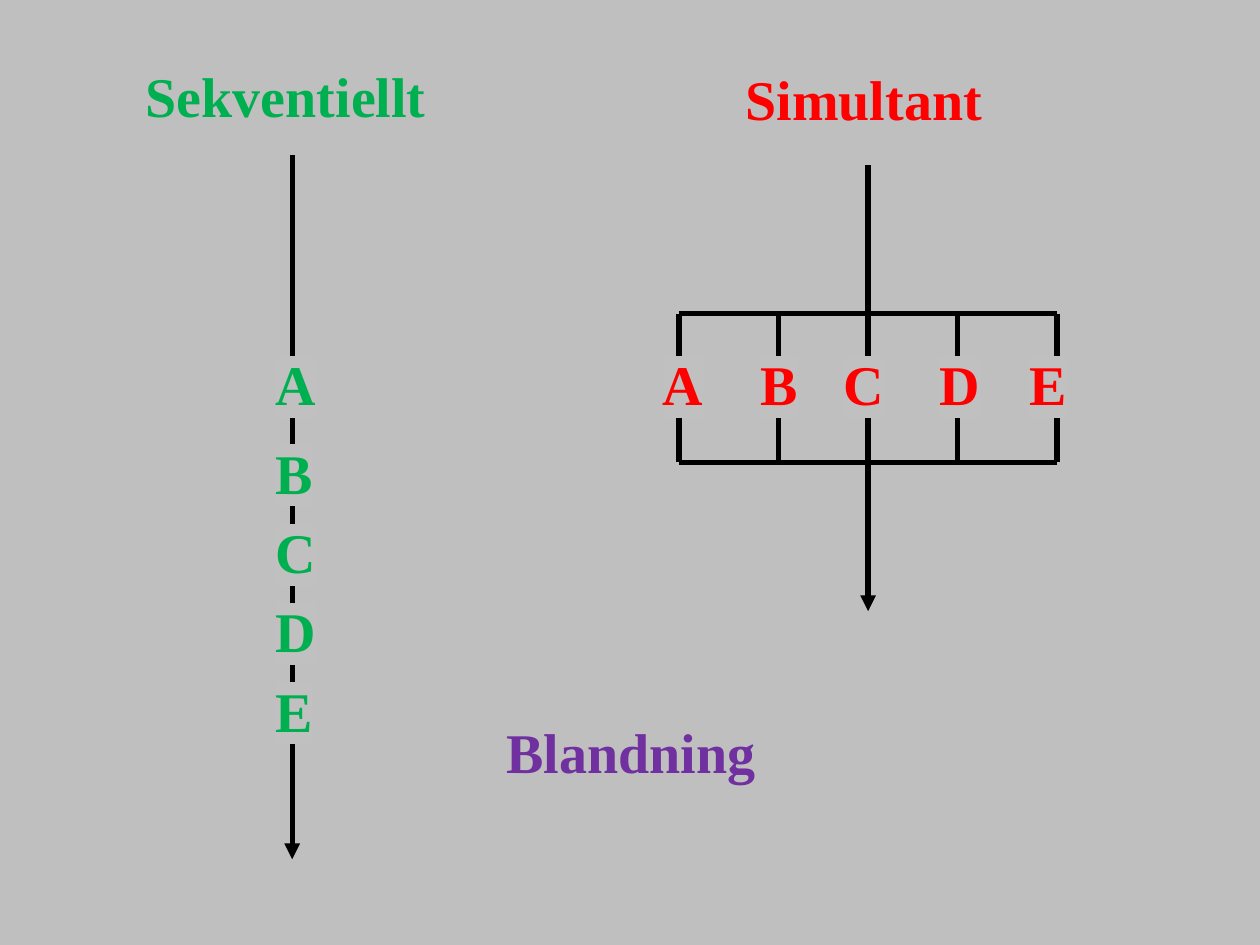
"""Build a slide comparing sequential and simultaneous processing of steps A to E."""
from lxml.etree import SubElement
from pptx import Presentation
from pptx.dml.color import RGBColor
from pptx.enum.shapes import MSO_CONNECTOR
from pptx.enum.text import MSO_AUTO_SIZE
from pptx.oxml.ns import qn
from pptx.util import Cm, Pt

GREY = RGBColor(0xBF, 0xBF, 0xBF)
BLACK = RGBColor(0, 0, 0)
GREEN = RGBColor(0x00, 0xB0, 0x50)
RED = RGBColor(0xFF, 0, 0)
PURPLE = RGBColor(0x70, 0x30, 0xA0)
HIGHLIGHT = "C0C0C0"

presentation = Presentation()
presentation.slide_width, presentation.slide_height = Cm(25.4), Cm(19.05)
slide = presentation.slides.add_slide(presentation.slide_layouts[6])
slide.background.fill.solid()
slide.background.fill.fore_color.rgb = GREY


def add_line(x1, y1, x2, y2, arrow=False):
    line = slide.shapes.add_connector(MSO_CONNECTOR.STRAIGHT, Cm(x1), Cm(y1), Cm(x2), Cm(y2))
    line.line.color.rgb = BLACK
    line.line.width = Pt(3)
    if arrow:
        SubElement(line.line._get_or_add_ln(), qn("a:tailEnd"), type="triangle")
    SubElement(line._element.spPr, qn("a:effectLst"))


def add_label(text, left, top, width, color, highlighted=False):
    frame = slide.shapes.add_textbox(Cm(left), Cm(top), Cm(width), Cm(1.63)).text_frame
    frame.word_wrap = False
    frame.auto_size = MSO_AUTO_SIZE.SHAPE_TO_FIT_TEXT
    paragraph = frame.paragraphs[0]
    run = paragraph.add_run()
    run.text = text
    paragraph.font.name = "Times New Roman"
    paragraph.font.size = Pt(32)
    paragraph.font.bold = True
    paragraph.font.color.rgb = color
    if highlighted:
        highlight = SubElement(run._r.get_or_add_rPr(), qn("a:highlight"))
        SubElement(highlight, qn("a:srgbClr"), val=HIGHLIGHT)


steps = "ABCDE"
step_widths = [1.35, 1.27, 1.35, 1.35, 1.27]
first_step_top = 6.93

add_line(5.89, 3.12, 5.89, 17.32, arrow=True)
sequential_tops = [first_step_top] + [8.71 + 1.6 * i for i in range(4)]
for step, top, width in zip(steps, sequential_tops, step_widths):
    add_label(step, 5.31, top, width, GREEN, highlighted=True)

branches = [13.69, 15.7, 17.5, 19.3, 21.31]
center = branches[2]
split, merge = 6.32, 9.32
add_line(center, 3.33, center, split)
for y in (split, merge):
    add_line(branches[0], y, branches[-1], y)
for x in branches:
    add_line(x, split, x, merge)
add_line(center, merge, center, 12.32, arrow=True)

simultaneous_lefts = [13.11, 15.09, 16.76, 18.69, 20.5]
for step, left, width in zip(steps, simultaneous_lefts, step_widths):
    add_label(step, left, first_step_top, width, RED, highlighted=True)

add_label("Sekventiellt", 2.69, 1.12, 6.2, GREEN)
add_label("Simultant", 14.78, 1.17, 5.31, RED)
add_label("Blandning", 9.96, 14.33, 5.59, PURPLE)

presentation.save("out.pptx")
